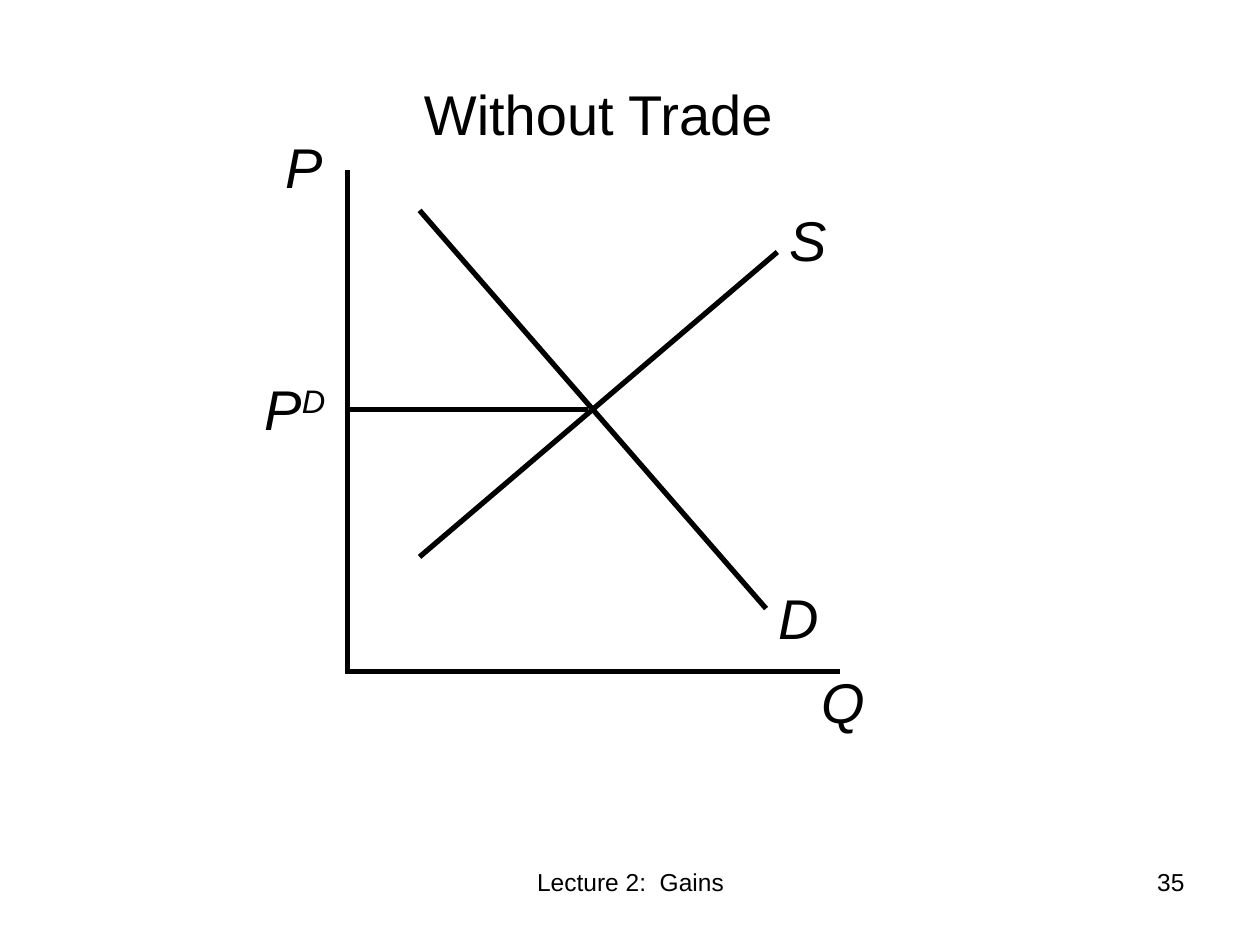
"""Build a supply and demand slide for a market without trade."""
from lxml import etree
from pptx import Presentation
from pptx.dml.color import RGBColor
from pptx.enum.shapes import MSO_CONNECTOR
from pptx.enum.text import MSO_ANCHOR, MSO_AUTO_SIZE, PP_ALIGN
from pptx.oxml.ns import qn
from pptx.util import Inches, Pt

STRAIGHT = MSO_CONNECTOR.STRAIGHT
TOP, MIDDLE = MSO_ANCHOR.TOP, MSO_ANCHOR.MIDDLE
GROW, FIXED = MSO_AUTO_SIZE.SHAPE_TO_FIT_TEXT, MSO_AUTO_SIZE.NONE
LEFT, CENTER, RIGHT = PP_ALIGN.LEFT, PP_ALIGN.CENTER, PP_ALIGN.RIGHT

COLORS = {"ink": "000000", "paper": "FFFFFF"}


class DiagramSlide:
    """Hold the style and the slide being drawn."""

    font = "Arial"
    label_size = 32
    footer_size = 14
    line_width = 3

    def __init__(self, deck):
        self.slide = deck.slides.add_slide(deck.slide_layouts[5])
        fill = self.slide.background.fill
        fill.solid()
        fill.fore_color.rgb = RGBColor.from_string(COLORS["paper"])

    def format_run(self, run, size, italic=False):
        run.font.name = self.font
        run.font.size = Pt(size)
        run.font.italic = italic
        run.font.color.rgb = RGBColor.from_string(COLORS["ink"])

    def set_text(self, frame, text, size, align, italic=False, anchor=TOP, fit=GROW):
        frame.text = text
        frame.word_wrap = True
        frame.auto_size = fit
        frame.vertical_anchor = anchor
        paragraph = frame.paragraphs[0]
        paragraph.alignment = align
        self.format_run(paragraph.runs[0], size, italic)
        return paragraph

    def title(self, text, left, top, width, height):
        heading = self.slide.shapes.title
        heading.left, heading.top = Inches(left), Inches(top)
        heading.width, heading.height = Inches(width), Inches(height)
        self.set_text(heading.text_frame, text, self.label_size, CENTER,
                      anchor=MIDDLE, fit=FIXED)

    def label(self, text, left, top, superscript=None):
        box = self.slide.shapes.add_textbox(
            Inches(left), Inches(top), Inches(2), Inches(0.64))
        paragraph = self.set_text(box.text_frame, text, self.label_size, LEFT, italic=True)
        if superscript:
            raised = paragraph.add_run()
            raised.text = superscript
            self.format_run(raised, self.label_size, italic=True)
            raised._r.get_or_add_rPr().set("baseline", "30000")

    def footer(self, text, left, width, align):
        box = self.slide.shapes.add_textbox(
            Inches(left), Inches(6.83), Inches(width), Inches(0.52))
        self.set_text(box.text_frame, text, self.footer_size, align, fit=FIXED)

    def line(self, start, end):
        points = [Inches(value) for value in (*start, *end)]
        connector = self.slide.shapes.add_connector(STRAIGHT, *points)
        connector.line.width = Pt(self.line_width)
        connector.line.color.rgb = RGBColor.from_string(COLORS["ink"])
        etree.SubElement(connector._element.spPr, qn("a:effectLst"))


def main():
    deck = Presentation()
    deck.slide_width, deck.slide_height = Inches(10), Inches(7.5)
    market = DiagramSlide(deck)

    market.title("Without Trade", 3.25, 0.58, 3, 0.64)

    price_axis = ((2.76, 1.35), (2.76, 5.35))
    quantity_axis = ((6.67, 5.33), (2.75, 5.33))
    supply = ((6.17, 2), (3.33, 4.42))
    demand = ((6.08, 4.83), (3.33, 1.67))
    domestic_price = ((4.67, 3.25), (2.75, 3.25))
    for start, end in (price_axis, quantity_axis, supply, demand, domestic_price):
        market.line(start, end)

    for text, left, top in (("S", 6.17, 1.58), ("D", 6.08, 4.58),
                            ("Q", 6.42, 5.25), ("P", 2.17, 1)):
        market.label(text, left, top)
    market.label("P", 2, 2.92, superscript="D")

    market.footer("Lecture 2:  Gains", 3.42, 3.17, CENTER)
    market.footer("35", 7.17, 2.33, RIGHT)

    deck.save("out.pptx")


if __name__ == "__main__":
    main()
